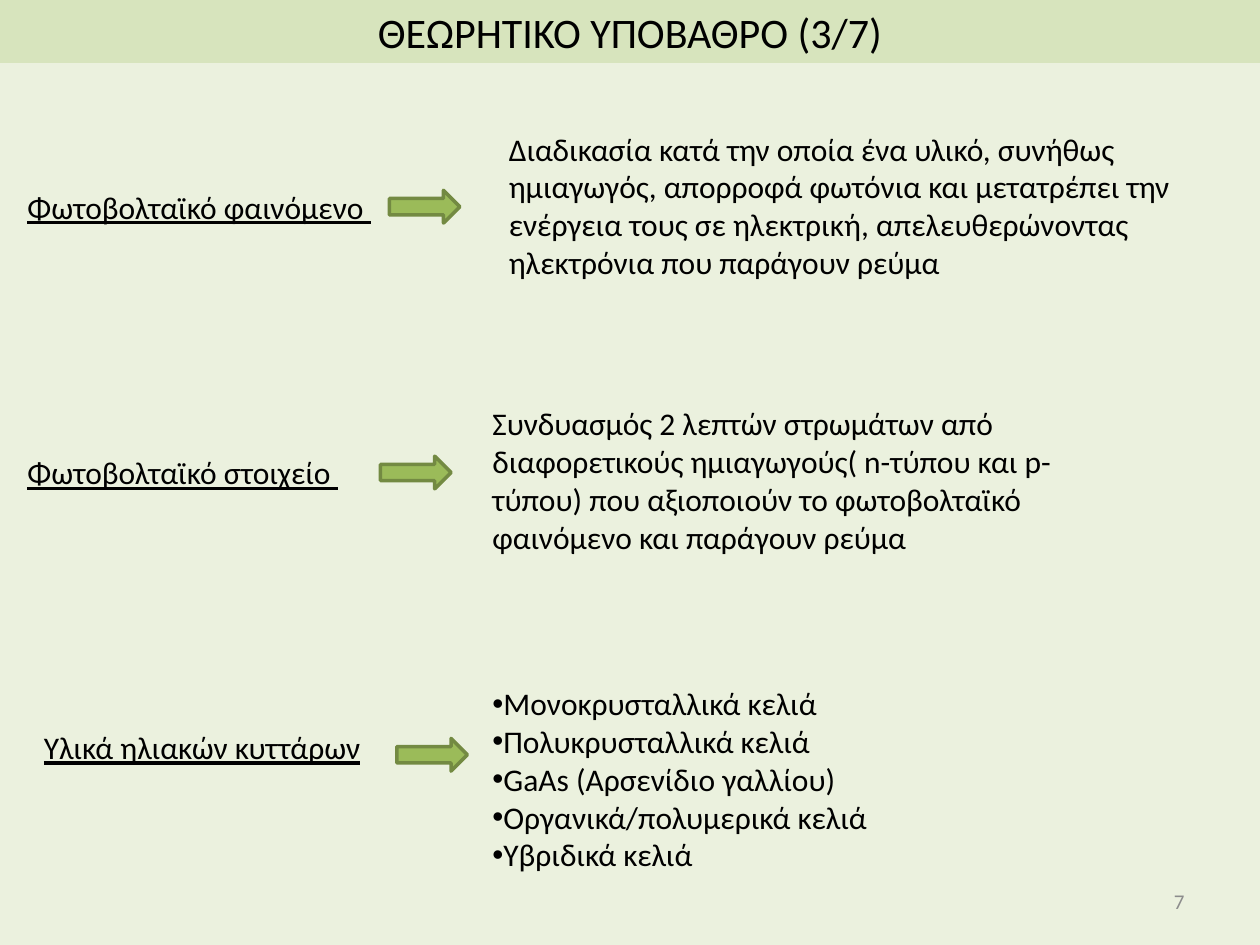
from lxml import etree
from pptx import Presentation
from pptx.dml.color import RGBColor
from pptx.enum.shapes import MSO_SHAPE
from pptx.enum.text import MSO_ANCHOR, PP_ALIGN
from pptx.oxml.ns import qn
from pptx.util import Pt

RECTANGLE, DOWN_ARROW = MSO_SHAPE.RECTANGLE, MSO_SHAPE.DOWN_ARROW
TOP, MIDDLE = MSO_ANCHOR.TOP, MSO_ANCHOR.MIDDLE
LEFT, CENTER, RIGHT = PP_ALIGN.LEFT, PP_ALIGN.CENTER, PP_ALIGN.RIGHT

BACKGROUND = RGBColor(0xEB, 0xF1, 0xDE)
BAND = RGBColor(0xD7, 0xE4, 0xBD)
GREEN = RGBColor(0x9B, 0xBB, 0x59)
DARK_GREEN = RGBColor(0x73, 0x8A, 0x42)
BLACK = RGBColor(0, 0, 0)
GREY = RGBColor(0x8C, 0x8C, 0x8C)

ARROW_WIDTH, ARROW_LENGTH = 18.72, 40.32


def write(frame, lines, size=18, color=BLACK, align=LEFT, anchor=TOP,
          underline=None, wrap=True, bullet=None):
    """Fill a text frame with one paragraph per line."""
    frame.word_wrap = wrap
    frame.vertical_anchor = anchor
    for index, line in enumerate(lines):
        paragraph = frame.add_paragraph() if index else frame.paragraphs[0]
        paragraph.alignment = align
        run = paragraph.add_run()
        run.text = line
        run.font.name = "Calibri"
        run.font.size = Pt(size)
        run.font.underline = underline
        run.font.color.rgb = color
        if bullet:
            properties = paragraph._p.get_or_add_pPr()
            etree.SubElement(properties, qn("a:buFont")).set("typeface", "Arial")
            etree.SubElement(properties, qn("a:buChar")).set("char", bullet)


def add_text(left, top, width, height, lines, **style):
    box = slide.shapes.add_textbox(Pt(left), Pt(top), Pt(width), Pt(height))
    write(box.text_frame, lines, **style)


deck = Presentation()
deck.slide_width, deck.slide_height = Pt(720), Pt(540)
slide = deck.slides.add_slide(deck.slide_layouts[6])
slide.background.fill.solid()
slide.background.fill.fore_color.rgb = BACKGROUND

title = slide.shapes.add_shape(RECTANGLE, 0, 0, Pt(720), Pt(36))
title.shadow.inherit = False
title.fill.solid()
title.fill.fore_color.rgb = BAND
title.line.fill.background()
write(title.text_frame, ["ΘΕΩΡΗΤΙΚΟ ΥΠΟΒΑΘΡΟ (3/7)"], size=24, align=CENTER,
      anchor=MIDDLE)

# term, its box (left, top, width), arrow (left, top)
terms = [
    ("Φωτοβολταϊκό φαινόμενο ", (8.64, 103.68, 213.12), (233.28, 97.92)),
    ("Φωτοβολταϊκό στοιχείο ", (8.64, 255.6, 194.4), (228.24, 249.84)),
    ("Υλικά ηλιακών κυττάρων", (18, 412.56, 204.48), (237.6, 411.12)),
]
for term, (left, top, width), (arrow_left, arrow_top) in terms:
    add_text(left, top, width, 28.8, [term], underline=True, wrap=False)
    arrow = slide.shapes.add_shape(DOWN_ARROW, Pt(arrow_left), Pt(arrow_top),
                                   Pt(ARROW_WIDTH), Pt(ARROW_LENGTH))
    arrow.rotation = 270
    arrow.shadow.inherit = False
    arrow.fill.solid()
    arrow.fill.fore_color.rgb = GREEN
    arrow.line.color.rgb = DARK_GREEN
    arrow.line.width = Pt(2)

add_text(283.68, 70.56, 436.32, 94.32, [
    "Διαδικασία κατά την οποία ένα υλικό, συνήθως ημιαγωγός, απορροφά φωτόνια "
    "και μετατρέπει την ενέργεια τους σε ηλεκτρική, απελευθερώνοντας "
    "ηλεκτρόνια που παράγουν ρεύμα"])
add_text(274.32, 227.52, 360, 116.64, [
    "Συνδυασμός 2 λεπτών στρωμάτων από διαφορετικούς ημιαγωγούς( n-τύπου και "
    "p-τύπου) που αξιοποιούν το φωτοβολταϊκό φαινόμενο και παράγουν ρεύμα"])
add_text(274.32, 365.04, 336.96, 159.84, [
    "Μονοκρυσταλλικά κελιά",
    "Πολυκρυσταλλικά κελιά",
    "GaAs (Αρσενίδιο γαλλίου)",
    "Οργανικά/πολυμερικά κελιά",
    "Υβριδικά κελιά",
], anchor=MIDDLE, bullet="•")
add_text(516.24, 500.4, 167.76, 28.8, ["7"], size=12, color=GREY, align=RIGHT,
         anchor=MIDDLE)

deck.save("out.pptx")
